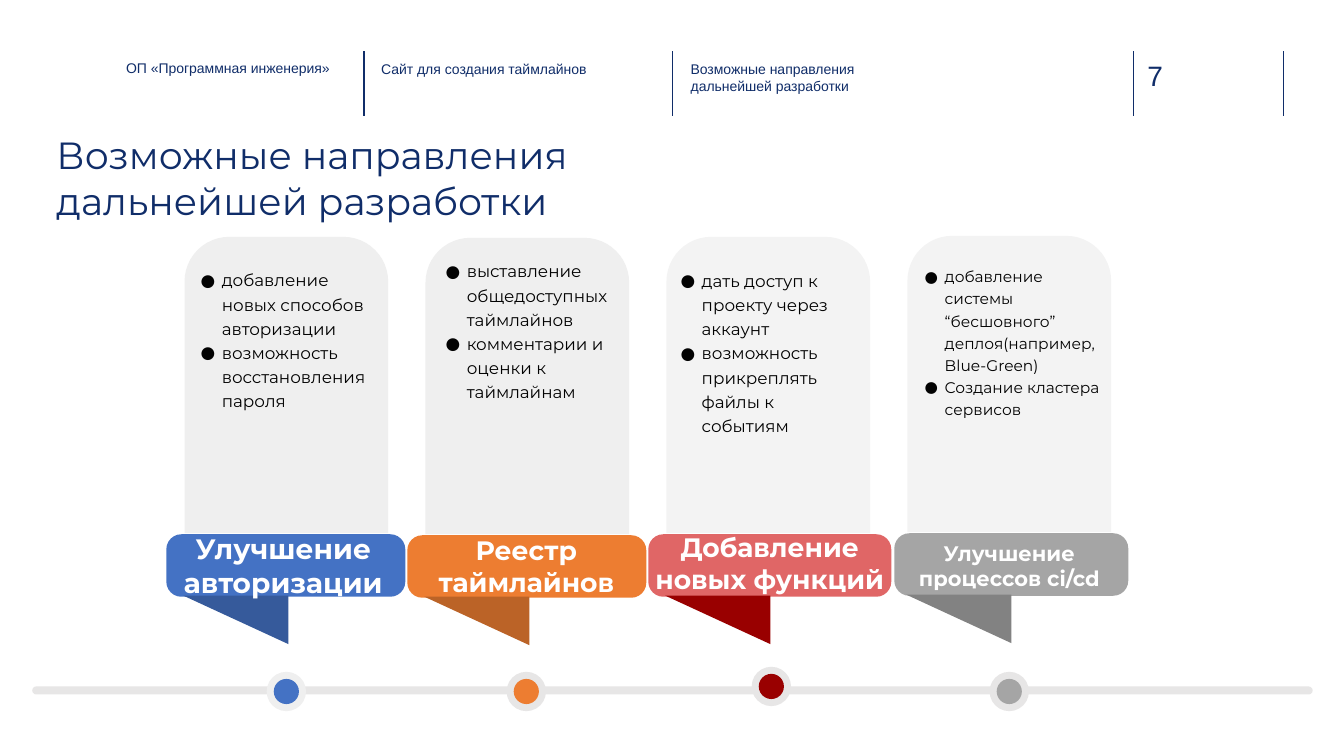
import pptx
import pptx.dml.color
import pptx.enum.shapes
import pptx.enum.text
import pptx.oxml
import pptx.oxml.ns
import pptx.util
from lxml import etree

Inches = pptx.util.Inches
SHAPE = pptx.enum.shapes.MSO_SHAPE
ALIGN = pptx.enum.text.PP_ALIGN
ANCHOR = pptx.enum.text.MSO_ANCHOR

COLORS = {
    "navy": "102D69", "ink": "020202", "white": "FFFFFF", "rail": "E7E6E6",
    "panel": "EFEFEF", "panel_light": "F3F3F3",
    "blue": "4472C4", "blue_dark": "365A9B",
    "orange": "ED7D31", "orange_dark": "BB6327",
    "red": "E06666", "red_dark": "990000",
    "gray": "A5A5A5", "gray_dark": "828282",
}

HEADERS = [
    ("ОП «Программная инженерия»", (1.25, 0.59, 2.08, 0.45), 10),
    ("Сайт для создания таймлайнов", (3.78, 0.6, 2.26, 0.45), 10),
    ("Возможные направления дальнейшей разработки", (6.85, 0.6, 2.26, 0.45), 10),
    ("7", (11.38, 0.58, 0.73, 0.34), 20),
]

COLUMNS = [
    {"top": 2.35, "panel": "panel", "label": "blue", "tail": "blue_dark",
     "dot": "blue", "ring": "panel", "center": (2.84, 6.86),
     "label_x": (1.65, 2.37), "title": "Улучшение авторизации",
     "title_box": (1.77, 5.25, 2.08, 0.72), "title_size": 20,
     "items": ["добавление новых способов авторизации",
               "возможность восстановления пароля"],
     "items_box": (1.9, 2.63, 1.82, 1.46), "size": 12},
    {"top": 2.36, "panel": "panel", "label": "orange", "tail": "orange_dark",
     "dot": "orange", "ring": "rail", "center": (5.22, 6.86),
     "label_x": (4.04, 2.37), "title": "Реестр таймлайнов",
     "title_box": (4.11, 5.27, 2.22, 0.69), "title_size": 19,
     "items": ["выставление общедоступных таймлайнов",
               "комментарии и оценки к таймлайнам"],
     "items_box": (4.33, 2.54, 1.82, 1.46), "size": 12},
    {"top": 2.35, "panel": "panel_light", "label": "red", "tail": "red_dark",
     "dot": "red_dark", "ring": "rail", "center": (7.65, 6.81),
     "label_x": (6.43, 2.41), "title": "Добавление новых функций",
     "title_box": (6.45, 5.24, 2.37, 0.69), "title_size": 19,
     "items": ["дать доступ к проекту через аккаунт",
               "возможность прикреплять файлы к событиям"],
     "items_box": (6.66, 2.63, 1.91, 1.71), "size": 12},
    {"top": 2.34, "panel": "panel_light", "label": "gray", "tail": "gray_dark",
     "dot": "gray", "ring": "rail", "center": (10.01, 6.86),
     "label_x": (8.87, 2.32), "title": "Улучшение процессов ci/cd",
     "title_box": (8.94, 5.33, 2.14, 0.56), "title_size": 15,
     "items": ["добавление системы “бесшовного” деплоя(например, Blue-Green)",
               "Создание кластера сервисов"],
     "items_box": (9.07, 2.6, 1.91, 1.57), "size": 11},
]


def rgb(name):
    """Return the named colour."""
    return pptx.dml.color.RGBColor.from_string(COLORS[name])


def assign(obj, values):
    """Set attributes from a dict."""
    for name, value in values.items():
        setattr(obj, name, value)


class Deck:
    """Holds the style and the current slide."""

    heading_font = "Montserrat"
    header_font = "Arial"

    def __init__(self):
        """Create the presentation with one title-only slide."""
        self.prs = pptx.Presentation()
        assign(self.prs, {"slide_width": Inches(13.33), "slide_height": Inches(7.5)})
        self.s = self.prs.slides.add_slide(self.prs.slide_layouts[5])

    def paint(self, sp, color):
        """Give a shape a plain fill with no line or shadow."""
        sp.shadow.inherit = False
        sp.fill.solid()
        sp.fill.fore_color.rgb = rgb(color)
        sp.line.fill.background()

    def shape(self, kind, box, color, adjustments=()):
        """Add a preset shape."""
        sp = self.s.shapes.add_shape(kind, *map(Inches, box))
        for i, value in enumerate(adjustments):
            sp.adjustments[i] = value
        self.paint(sp, color)

    def tail(self, x, y, color):
        """Add the triangular tail under a label."""
        builder = self.s.shapes.build_freeform(Inches(x), Inches(y))
        corners = [(x + 1.04, y + 0.48), (x + 1.04, y)]
        builder.add_line_segments([(Inches(a), Inches(b)) for a, b in corners])
        self.paint(builder.convert_to_shape(), color)

    def dot(self, center, size, color):
        """Add a circle around a centre."""
        x, y = center
        self.shape(SHAPE.OVAL, (x - size / 2, y - size / 2, size, size), color)

    def rule(self, x):
        """Add a vertical header rule."""
        line = self.s.shapes.add_connector(
            pptx.enum.shapes.MSO_CONNECTOR.STRAIGHT,
            *map(Inches, (x, 0.51, x, 1.15)))
        line.line.color.rgb = rgb("navy")
        line.line.width = pptx.util.Pt(1)
        sp_pr = line._element.spPr
        etree.SubElement(sp_pr, pptx.oxml.ns.qn("a:effectLst"))

    def fill_text(self, tf, lines, color, font, frame, para, margins=(0, 0), bullet=None):
        """Fill a text frame with formatted paragraphs."""
        mx, my = map(Inches, margins)
        assign(tf, {"word_wrap": True, "margin_left": mx, "margin_right": mx,
                    "margin_top": my, "margin_bottom": my, **frame})
        for i, line in enumerate(lines):
            p = tf.add_paragraph() if i else tf.paragraphs[0]
            if bullet:
                self.bullet(p, bullet)
            assign(p, para)
            r = p.add_run()
            r.text = line
            assign(r.font, font)
            r.font.color.rgb = rgb(color)

    def bullet(self, p, indent):
        """Give a paragraph a round bullet and hanging indent."""
        p_pr = p._p.get_or_add_pPr()
        p_pr.set("marL", str(Inches(0.25)))
        p_pr.set("indent", str(-Inches(indent)))
        qn = pptx.oxml.ns.qn
        bu_clr = etree.SubElement(p_pr, qn("a:buClr"))
        etree.SubElement(bu_clr, qn("a:srgbClr"), val=COLORS["ink"])
        etree.SubElement(p_pr, qn("a:buFont"), typeface=self.heading_font)
        etree.SubElement(p_pr, qn("a:buChar"), char="●")

    def text(self, box, *args, **kwargs):
        """Add a text box."""
        sp = self.s.shapes.add_textbox(*map(Inches, box))
        self.fill_text(sp.text_frame, *args, **kwargs)

    def title(self, text, box):
        """Place and format the title placeholder."""
        sp = self.s.shapes.title
        assign(sp, dict(zip(("left", "top", "width", "height"), map(Inches, box))))
        self.fill_text(sp.text_frame, [text], "navy",
                       {"name": self.heading_font, "size": pptx.util.Pt(27)},
                       {"vertical_anchor": ANCHOR.TOP,
                        "auto_size": pptx.enum.text.MSO_AUTO_SIZE.NONE},
                       {"alignment": ALIGN.LEFT, "line_spacing": 1.0})

    def header(self, text, box, size):
        """Add a header entry."""
        self.text(box, [text], "navy",
                  {"name": self.header_font, "size": pptx.util.Pt(size)},
                  {"vertical_anchor": ANCHOR.TOP}, {"alignment": ALIGN.LEFT})

    def column(self, i, col):
        """Add one direction: panel, label, tail, marker and texts."""
        x, top = 1.83 + 2.39 * i, col["top"]
        left, width = col["label_x"]
        self.shape(SHAPE.ROUND_2_SAME_RECTANGLE, (x, top, 2.02, 2.94),
                   col["panel"], (0.22, 0))
        self.shape(SHAPE.ROUNDED_RECTANGLE, (left, top + 2.95, width, 0.62),
                   col["label"], (0.24,))
        self.tail(x - 0.01, top + 3.56, col["tail"])
        self.dot(col["center"], 0.39, col["ring"])
        self.dot(col["center"], 0.25, col["dot"])
        middle = {"vertical_anchor": ANCHOR.MIDDLE}
        self.text(col["title_box"], [col["title"]], "white",
                  {"name": self.heading_font, "bold": True,
                   "size": pptx.util.Pt(col["title_size"])},
                  middle, {"alignment": ALIGN.CENTER}, margins=(0.05, 0.02))
        self.text(col["items_box"], col["items"], "ink",
                  {"name": self.heading_font, "size": pptx.util.Pt(col["size"])},
                  middle, {"alignment": ALIGN.LEFT, "line_spacing": 1.2},
                  margins=(0.05, 0.02), bullet=0.21 if col["size"] == 12 else 0.2)


def main():
    """Build and save the slide."""
    deck = Deck()
    for x in (3.61, 6.67, 11.24, 12.73):
        deck.rule(x)
    for header in HEADERS:
        deck.header(*header)
    deck.title("Возможные направления дальнейшей разработки", (0.56, 1.31, 5.74, 0.85))
    deck.shape(SHAPE.ROUNDED_RECTANGLE, (0.32, 6.81, 12.7, 0.08), "rail", (0.5,))
    for i, col in enumerate(COLUMNS):
        deck.column(i, col)
    deck.prs.save("out.pptx")


if __name__ == "__main__":
    main()
